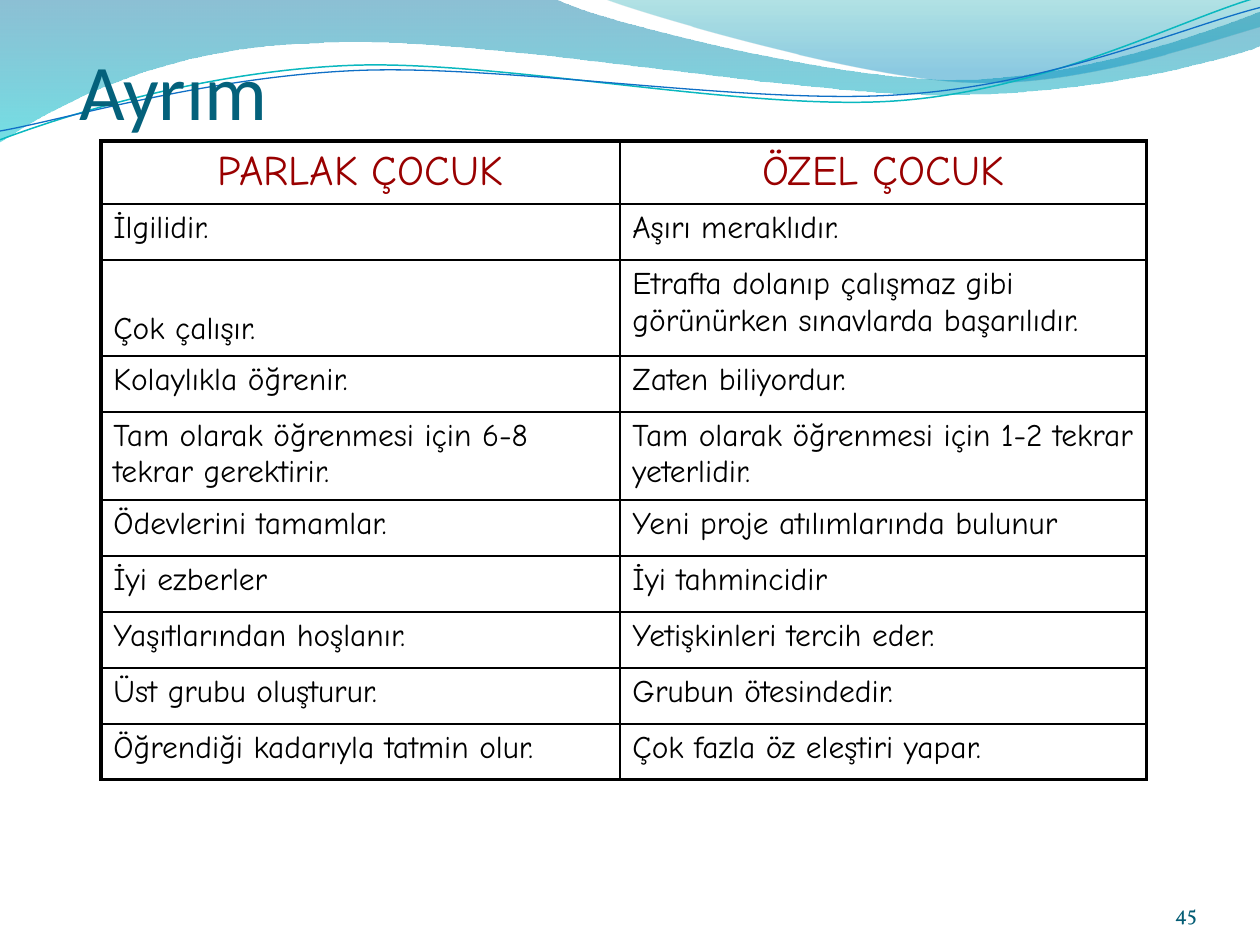
"""Build the slide that compares bright and gifted children."""
from lxml import etree
from pptx import Presentation
from pptx.dml.color import RGBColor
from pptx.enum.text import MSO_ANCHOR, PP_ALIGN
from pptx.oxml.ns import qn
from pptx.util import Inches, Pt

LEFT, CENTER, RIGHT = PP_ALIGN.LEFT, PP_ALIGN.CENTER, PP_ALIGN.RIGHT
BOTTOM = MSO_ANCHOR.BOTTOM

BLACK = RGBColor(0x00, 0x00, 0x00)
RED = RGBColor(0x99, 0x00, 0x00)
TEAL = RGBColor(0x04, 0x61, 0x7B)
DEEP = RGBColor(0x04, 0x5D, 0x75)
AQUA = RGBColor(0x0A, 0xB8, 0xBF)
BLUE = RGBColor(0x0F, 0x6F, 0xC6)
OCEAN = RGBColor(0x00, 0x74, 0xA1)
CYAN = RGBColor(0x00, 0xC6, 0xCF)
GREEN = RGBColor(0x00, 0xA1, 0xA9)
SKY = RGBColor(0x00, 0x8B, 0xBF)

HAND = "Comic Neue"
THIN, THICK = 1, 2.25
UNITS = 100

WAVES = [
    ([(0, 0), (4.4, -0.01), (4.76, 0.17, 6.64, 0.63, 7.58, 0.63),
      (8.53, 0.63, 9.58, 0.26, 10, 0.09), (10.01, 0.36),
      (9.83, 0.44, 8.7, 0.76, 7.46, 0.75), (6.22, 0.75, 3.82, 0.28, 2.57, 0.34),
      (1.29, 0.36, 0.46, 0.83, -0.01, 1.13), (0, 0)],
     [(0, OCEAN, 45), (1, CYAN, 55)]),
    ([(4.79, -0.01), (5.09, 0.11, 6.82, 0.62, 7.69, 0.65),
      (8.56, 0.69, 9.61, 0.32, 10, 0.21), (10, 0), (4.79, -0.01)],
     [(0, GREEN, 30), (0.8, SKY, 45)]),
]
CURVES = [
    ([(0, 1.11), (0.48, 0.93, 1.58, 0.57, 2.77, 0.52),
      (3.95, 0.47, 5.93, 0.89, 7.13, 0.8), (8.33, 0.71, 9.38, 0.15, 9.98, -0.02)],
     AQUA, 0.85),
    ([(0, 1.04), (0.47, 0.96, 1.64, 0.61, 2.83, 0.56),
      (4.03, 0.51, 5.97, 0.84, 7.17, 0.75), (8.36, 0.67, 9.41, 0.21, 10, 0.06)],
     BLUE, 0.75),
]

COLS = [4.12, 4.18]
LINE = 4 / 9
ROWS = [
    (0.5, "PARLAK ÇOCUK", "ÖZEL ÇOCUK"),
    (LINE, "İlgilidir.", "Aşırı meraklıdır."),
    (0.76, "Çok çalışır.",
     "Etrafta dolanıp çalışmaz gibi görünürken sınavlarda başarılıdır."),
    (LINE, "Kolaylıkla öğrenir.", "Zaten biliyordur."),
    (0.7, "Tam olarak öğrenmesi için 6-8 tekrar gerektirir.",
     "Tam olarak öğrenmesi için 1-2 tekrar yeterlidir."),
    (LINE, "Ödevlerini tamamlar.", "Yeni proje atılımlarında bulunur"),
    (LINE, "İyi ezberler", "İyi tahmincidir"),
    (LINE, "Yaşıtlarından hoşlanır.", "Yetişkinleri tercih eder."),
    (LINE, "Üst grubu oluşturur.", "Grubun ötesindedir."),
    (LINE, "Öğrendiği kadarıyla tatmin olur.", "Çok fazla öz eleştiri yapar."),
]


def write(frame, text, font, size, color, align=LEFT, before=0):
    """Put one formatted paragraph into a text frame."""
    frame.word_wrap = True
    para = frame.paragraphs[0]
    para.alignment = align
    para.space_before = Pt(before)
    run = para.add_run()
    run.text = text
    run.font.name, run.font.size = font, Pt(size)
    run.font.bold = False
    run.font.color.rgb = color


def inset(frame, left=0, top=0):
    """Set the left and top margins of a frame and clear the others."""
    frame.margin_left, frame.margin_top = Inches(left), Inches(top)
    frame.margin_right = frame.margin_bottom = 0
    frame.vertical_anchor = BOTTOM


def outline(slide, steps, close):
    """Draw a freeform of lines (one point) and cubic curves (three points)."""
    points = [(round(x * UNITS), round(y * UNITS))
              for step in steps for x, y in zip(step[::2], step[1::2])]
    build = slide.shapes.build_freeform(*points[0], scale=Inches(1) / UNITS)
    build.add_line_segments(points[1:], close=close)
    shape = build.convert_to_shape()
    shape.shadow.inherit = False
    lines = iter(list(shape.element.spPr.iter(qn("a:lnTo"))))
    for step in steps[1:]:
        first, *more = [next(lines) for _ in step[::2]]
        if more:
            curve = etree.Element(qn("a:cubicBezTo"))
            first.addprevious(curve)
            for part in (first, *more):
                curve.append(part[0])
                part.getparent().remove(part)
    return shape


def add_wave(slide, steps, stops):
    """Add a closed wave with a see-through vertical gradient."""
    shape = outline(slide, steps, True)
    shape.fill.gradient()
    shape.fill.gradient_angle = 270
    for stop, (place, color, _) in zip(shape.fill.gradient_stops, stops):
        stop.position = place
        stop.color.rgb = color
    tints = list(shape.element.spPr.iter(qn("a:srgbClr")))
    for tint, (_, _, alpha) in zip(tints, stops):
        etree.SubElement(tint, qn("a:alpha"), val=str(alpha * 1000))
    shape.line.fill.background()


def add_curve(slide, steps, color, width):
    """Add an open curved line."""
    shape = outline(slide, steps, False)
    shape.fill.background()
    shape.line.color.rgb = color
    shape.line.width = Pt(width)


def border(cell, widths):
    """Draw the left, right, top and bottom borders of a cell."""
    props = cell._tc.get_or_add_tcPr()
    for i, (side, width) in enumerate(zip("LRTB", widths)):
        line = etree.Element(qn(f"a:ln{side}"), w=str(Pt(width)))
        fill = etree.SubElement(line, qn("a:solidFill"))
        etree.SubElement(fill, qn("a:srgbClr"), val=str(BLACK))
        props.insert(i, line)


def add_grid(slide):
    """Add the table that compares the two groups."""
    high = sum(row[0] for row in ROWS)
    table = slide.shapes.add_table(len(ROWS), len(COLS), Inches(0.8), Inches(1.12),
                                   Inches(sum(COLS)), Inches(high)).table
    table.first_row = table.horz_banding = False
    for col, width in zip(table.columns, COLS):
        col.width = Inches(width)
    last = len(ROWS) - 1
    for r, (height, *texts) in enumerate(ROWS):
        table.rows[r].height = Inches(height)
        size, color, align = (18, BLACK, LEFT) if r else (24, RED, CENTER)
        for c, text in enumerate(texts):
            cell = table.cell(r, c)
            cell.fill.background()
            write(cell.text_frame, text, HAND, size, color, align, 0.2 * size)
            edges = (c == 0, c == 1, r == 0, r == last)
            border(cell, [THICK if edge else THIN for edge in edges])
    low = table.cell(2, 0)
    low.vertical_anchor = BOTTOM
    low.margin_bottom = Inches(0.07)


def add_title(slide):
    """Fill the title and bring it in front of the waves."""
    title = slide.shapes.title
    title.left, title.top = Inches(0.35), Inches(0.23)
    title.width, title.height = Inches(9.29), Inches(0.85)
    inset(title.text_frame, left=0.28, top=0.05)
    write(title.text_frame, "Ayrım", "Calibri", 45, TEAL)
    slide.shapes._spTree.append(title.element)


def add_number(slide):
    """Add the page number in the corner."""
    box = slide.shapes.add_textbox(Inches(8.67), Inches(6.95), Inches(0.83), Inches(0.4))
    inset(box.text_frame)
    write(box.text_frame, "45", "Vollkorn", 12, DEEP, RIGHT)


def main():
    """Build and save the slide."""
    deck = Presentation()
    deck.slide_width, deck.slide_height = Inches(10), Inches(7.5)
    slide = deck.slides.add_slide(deck.slide_layouts[5])
    for wave in WAVES:
        add_wave(slide, *wave)
    for curve in CURVES:
        add_curve(slide, *curve)
    add_title(slide)
    add_grid(slide)
    add_number(slide)
    deck.save("out.pptx")


if __name__ == "__main__":
    main()
